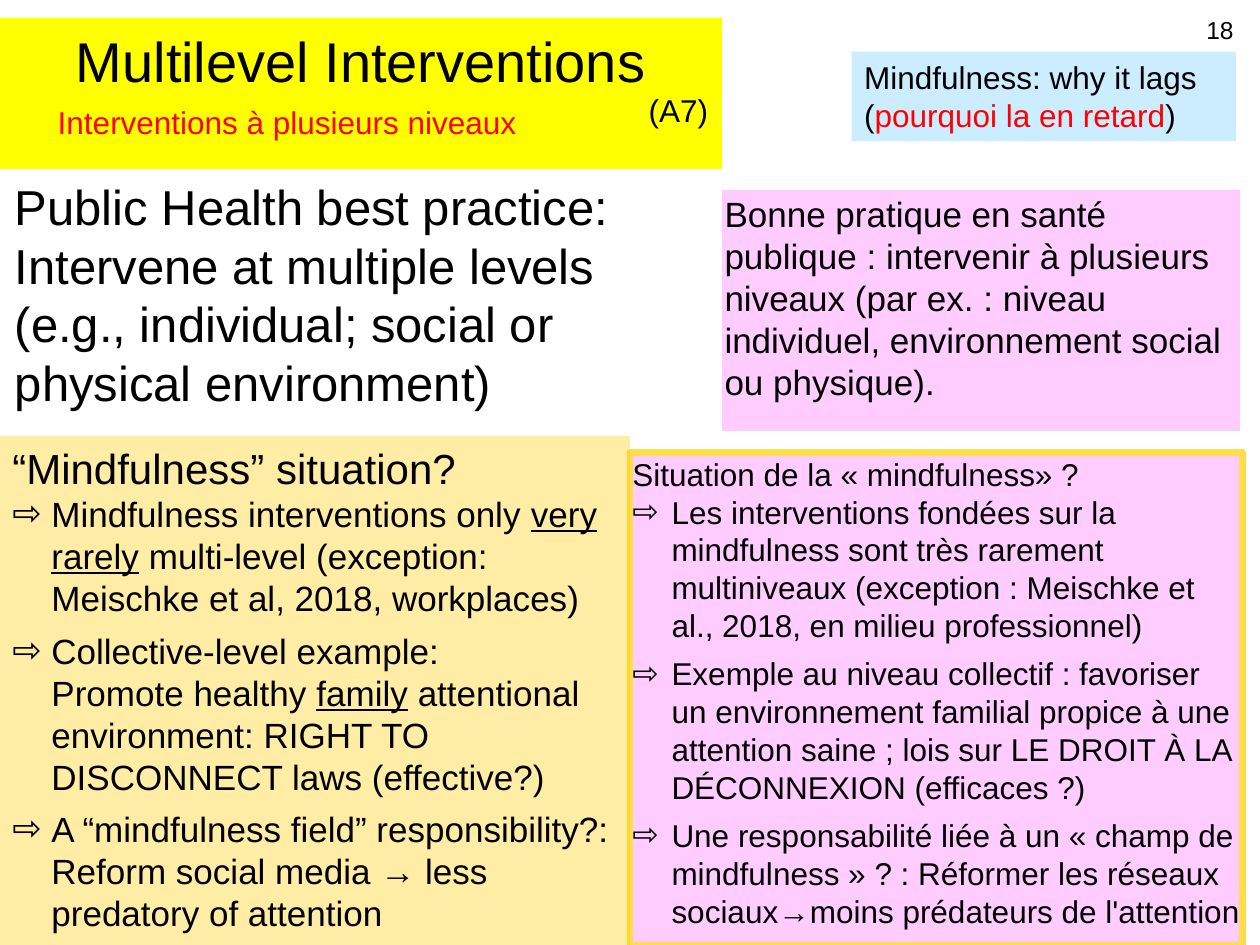
from lxml.etree import SubElement
from pptx import Presentation
from pptx.dml.color import RGBColor
from pptx.enum.shapes import MSO_SHAPE
from pptx.enum.text import MSO_ANCHOR, MSO_AUTO_SIZE, PP_ALIGN
from pptx.oxml.ns import qn
from pptx.util import Inches, Pt

BLACK = RGBColor(0x00, 0x00, 0x00)
RED = RGBColor(0xFF, 0x00, 0x00)
YELLOW = RGBColor(0xFF, 0xFF, 0x00)
PINK = RGBColor(0xFF, 0xCC, 0xFF)
GOLD = RGBColor(0xFF, 0xCC, 0x00)
EDGE = RGBColor(0xFF, 0xDD, 0x4B)
SKY = RGBColor(0xCC, 0xEC, 0xFF)

COLS, ROWS = 100, 75


class Deck:
    """Holds the style and the slide, and adds each kind of element."""

    face = "Arial"
    hang = Inches(0.31)
    slim = Inches(0.02)

    def __init__(self):
        """Open a title-only slide on a grid of tenths of an inch."""
        self.file = Presentation()
        self.file.slide_width = Inches(10)
        self.file.slide_height = Inches(7.5)
        self.slide = self.file.slides.add_slide(self.file.slide_layouts[5])

    def area(self, col, row, wide, high):
        """Turn grid columns and rows into lengths."""
        across = self.file.slide_width / COLS
        down = self.file.slide_height / ROWS
        return [round(n * s) for n, s in zip((col, row, wide, high), (across, down) * 2)]

    def title(self, grid, text, size, fill):
        """Move, fill and letter the title placeholder."""
        shape = self.slide.shapes.title
        shape.left, shape.top, shape.width, shape.height = self.area(*grid)
        self.paint(shape, fill)
        self.letter(shape, [text], size, align=PP_ALIGN.CENTER)
        shape.text_frame.margin_top = Inches(0.07)

    def label(self, grid, lines, size, **look):
        """Add a plain text box."""
        shape = self.slide.shapes.add_textbox(*self.area(*grid))
        self.letter(shape, lines, size, **look)

    def panel(self, grid, lines, size, fill, alpha=None, **look):
        """Add a filled rectangle with text."""
        shape = self.slide.shapes.add_shape(MSO_SHAPE.RECTANGLE, *self.area(*grid))
        self.paint(shape, fill, alpha)
        self.letter(shape, lines, size, **look)

    def callout(self, grid, lines, size, line=None, **look):
        """Add a pink callout with narrow margins."""
        shape = self.slide.shapes.add_shape(
            MSO_SHAPE.RECTANGULAR_CALLOUT, *self.area(*grid))
        shape.adjustments[0] = -0.5
        shape.adjustments[1] = -0.19
        self.paint(shape, PINK)
        if line is not None:
            shape.line.color.rgb = line
            shape.line.width = Pt(3.75)
        self.letter(shape, lines, size, **look)
        frame = shape.text_frame
        frame.margin_left = frame.margin_right = self.slim
        frame.margin_top = frame.margin_bottom = self.slim

    def paint(self, shape, fill, alpha=None):
        """Fill a shape and drop its line and shadow."""
        shape.shadow.inherit = False
        shape.fill.solid()
        shape.fill.fore_color.rgb = fill
        shape.line.fill.background()
        if alpha is not None:
            tint = shape.element.spPr.find(qn("a:solidFill"))[0]
            SubElement(tint, qn("a:alpha"), val=str(alpha * 1000))

    def letter(self, shape, lines, size, head=None, color=BLACK,
               align=PP_ALIGN.LEFT, wrap=True):
        """Set a paragraph per line; with a head size, bullet the rest."""
        frame = shape.text_frame
        frame.word_wrap = wrap
        frame.auto_size = MSO_AUTO_SIZE.NONE
        frame.vertical_anchor = MSO_ANCHOR.TOP
        for i, line in enumerate(lines):
            para = frame.add_paragraph() if i else frame.paragraphs[0]
            para.alignment = align
            para.space_before = Pt(6 if i > 1 else 0)
            if i:
                self.bullet(para)
            font = para.font
            font.name = self.face
            font.size = Pt(size if i or head is None else head)
            font.color.rgb = color
            for part in [line] if isinstance(line, str) else line:
                self.piece(para, part)

    def bullet(self, para):
        """Give a paragraph a hanging arrow bullet."""
        props = para._p.get_or_add_pPr()
        props.set("marL", str(self.hang))
        props.set("indent", str(-self.hang))
        SubElement(props, qn("a:buFont"), typeface=self.face)
        SubElement(props, qn("a:buChar"), char="⇨")

    def piece(self, para, part):
        """Add text, or a pair of text and mark: a colour or an underline."""
        text, mark = (part, None) if isinstance(part, str) else part
        for i, words in enumerate(text.split("\n")):
            if i:
                para.add_line_break()
            run = para.add_run()
            run.text = words
            if mark == "under":
                run.font.underline = True
            elif mark is not None:
                run.font.color.rgb = mark


def main():
    """Build the slide and save it."""
    deck = Deck()
    deck.callout((50, 35.9, 48.6, 39.1), [
        "Situation de la « mindfulness» ?",
        "Les interventions fondées sur la mindfulness sont très rarement "
        "multiniveaux (exception : Meischke et al., 2018, en milieu professionnel)",
        "Exemple au niveau collectif : favoriser un environnement familial propice "
        "à une attention saine ; lois sur LE DROIT À LA DÉCONNEXION (efficaces ?)",
        "Une responsabilité liée à un « champ de mindfulness » ? : Réformer les "
        "réseaux sociaux→moins prédateurs de l'attention",
    ], 18, line=EDGE, head=18)
    deck.title((0, 1.4, 57.3, 12), "Multilevel Interventions", 32, YELLOW)
    deck.label((0.2, 13.5, 56.7, 20.6), [
        "Public Health best practice: \nIntervene at multiple levels\n"
        "(e.g., individual; social or physical environment)"], 28)
    deck.label((75.6, 0.7, 23.3, 5.2), ["18"], 14, align=PP_ALIGN.RIGHT)
    deck.panel((50.5, 6.7, 6.8, 4), ["(A7)"], 18, YELLOW, wrap=False)
    deck.panel((0, 34.6, 50, 40.4), [
        "“Mindfulness” situation?",
        ["Mindfulness interventions only ", ("very rarely", "under"),
         " multi-level (exception: Meischke et al, 2018, workplaces)"],
        ["Collective-level example: \nPromote healthy ", ("family", "under"),
         " attentional environment: RIGHT TO DISCONNECT laws (effective?)"],
        "A “mindfulness field” responsibility?: Reform social media → less "
        "predatory of attention",
    ], 20, GOLD, alpha=35, head=24)
    deck.label((3.6, 7.7, 38.8, 4), ["Interventions à plusieurs niveaux"], 18,
               color=RED, wrap=False)
    deck.panel((67.6, 4.1, 30.5, 7.1), [
        ["Mindfulness: why it lags \n(", ("pourquoi la en retard", RED), ")"],
    ], 18, SKY, wrap=False)
    deck.callout((57.3, 15.1, 41.1, 19.1), [
        "Bonne pratique en santé publique : intervenir à plusieurs niveaux "
        "(par ex. : niveau individuel, environnement social ou physique)."], 20)
    deck.file.save("out.pptx")


if __name__ == "__main__":
    main()
